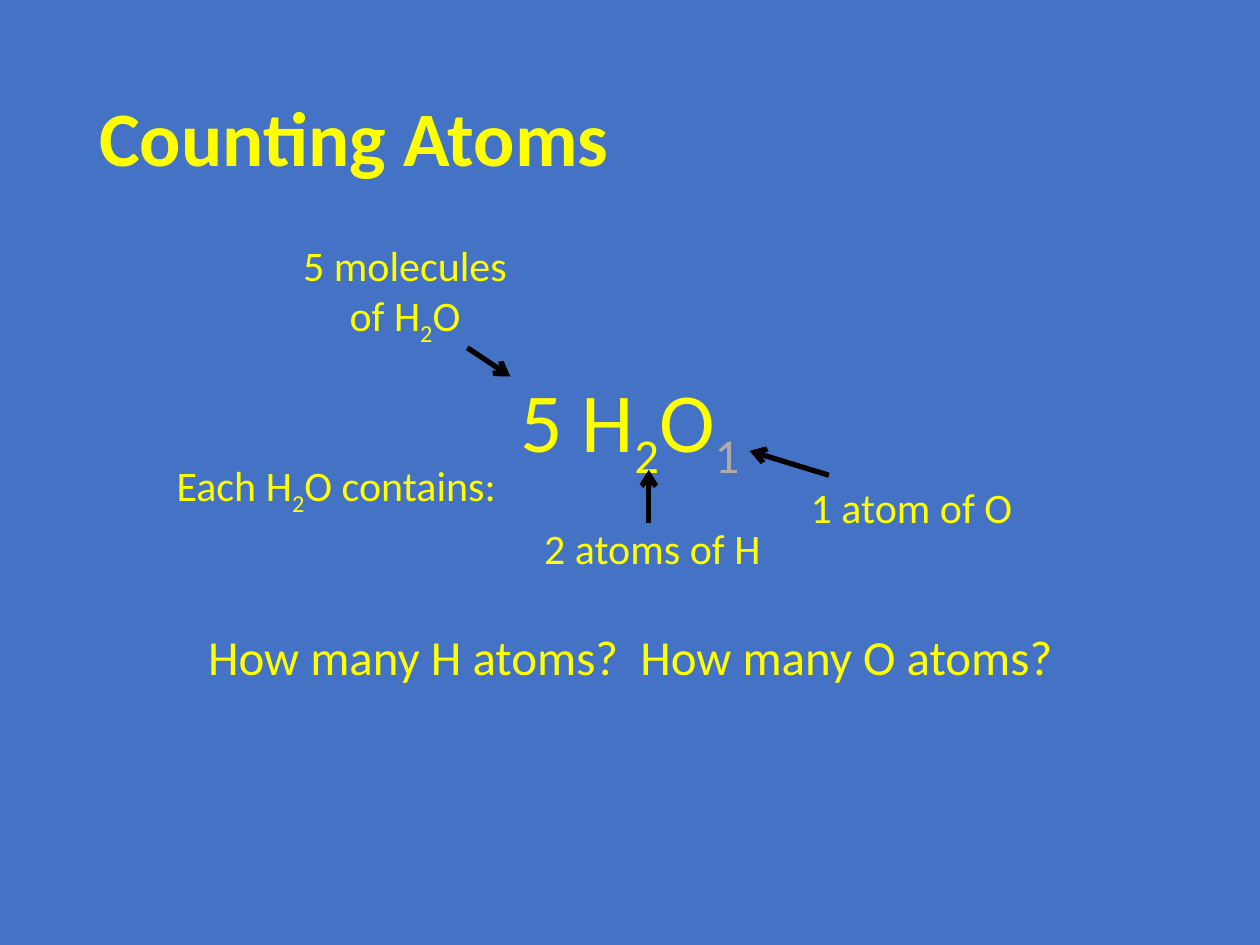
import pptx
import pptx.util
import pptx.dml.color
import pptx.enum.shapes
import pptx.enum.text
import pptx.oxml.ns
import lxml.etree

Cm = pptx.util.Cm
Pt = pptx.util.Pt
ALIGN = pptx.enum.text.PP_ALIGN
ANCHOR = pptx.enum.text.MSO_ANCHOR
BLUE, YELLOW, GREY, BLACK = "4472C4", "FFFF00", "AFABAB", "000000"


def color(code):
    return pptx.dml.color.RGBColor.from_string(code)


def add_box(slide, box, anchor=ANCHOR.TOP):
    frame = slide.shapes.add_textbox(*(Cm(v) for v in box)).text_frame
    frame.word_wrap = True
    frame.vertical_anchor = anchor
    return frame


def add_run(para, text, size, tint=YELLOW, bold=False, sub=False):
    run = para.add_run()
    run.text = text
    font = run.font
    font.name = "Calibri"
    font.size = Pt(size)
    font.bold = bold
    font.color.rgb = color(tint)
    if sub:
        run._r.get_or_add_rPr().set("baseline", "-25000")


def add_water(para, lead, tail, size):
    """Write H2O with a lowered 2 between the lead and tail text."""
    add_run(para, lead + "H", size)
    add_run(para, "2", size, sub=True)
    add_run(para, "O" + tail, size)


def add_arrow(slide, start, end):
    ends = [Cm(v) for v in (*start, *end)]
    line = slide.shapes.add_connector(
        pptx.enum.shapes.MSO_CONNECTOR.STRAIGHT, *ends)
    line.line.width = Pt(3)
    line.line.color.rgb = color(BLACK)
    qn = pptx.oxml.ns.qn
    lxml.etree.SubElement(line.line._get_or_add_ln(), qn("a:tailEnd"), type="arrow")
    lxml.etree.SubElement(line._element.spPr, qn("a:effectLst"))


def add_title(slide, box):
    para = add_box(slide, box, ANCHOR.MIDDLE).paragraphs[0]
    para.line_spacing = 0.9
    add_run(para, "Counting Atoms", 44, bold=True)


def add_body(slide, box):
    frame = add_box(slide, box)
    sum_para, ask_para = frame.paragraphs[0], frame.add_paragraph()
    for para, gap in ((sum_para, 10), (ask_para, 91.5)):
        para.alignment = ALIGN.CENTER
        para.line_spacing = 0.9
        para.space_before = Pt(gap)
    add_water(sum_para, "5 ", "", 48)
    add_run(sum_para, "1", 48, GREY, sub=True)
    add_run(ask_para, "How many H atoms?  How many O atoms?", 28)


def add_label(slide, box, lead, tail=None, arrow=None):
    """Place a caption; a tail adds H2O, an arrow is two points from the box corner."""
    para = add_box(slide, box).paragraphs[0]
    para.alignment = ALIGN.CENTER
    if tail is None:
        add_run(para, lead, 24)
    else:
        add_water(para, lead, tail, 24)
    if arrow:
        left, top = box[:2]
        add_arrow(slide, *((left + x, top + y) for x, y in arrow))


def main():
    deck = pptx.Presentation()
    deck.slide_width, deck.slide_height = Cm(25.4), Cm(19.05)
    slide = deck.slides.add_slide(deck.slide_layouts[6])
    fill = slide.background.fill
    fill.solid()
    fill.fore_color.rgb = color(BLUE)

    add_title(slide, (1.75, 1.02, 21.9, 3.68))
    add_body(slide, (1.75, 7.34, 21.9, 9.83))
    add_label(slide, (5.79, 4.7, 4.75, 2.31), "5 molecules of ", "",
              ((3.63, 2.31), (4.5, 2.89)))
    add_label(slide, (3.02, 9.14, 7.52, 1.27), "Each ", " contains:")
    add_label(slide, (10.29, 10.41, 5.72, 1.27), "2 atoms of H",
              arrow=((2.79, 0.13), (2.79, -0.94)))
    add_label(slide, (16, 9.58, 4.75, 1.27), "1 atom of O",
              arrow=((0.71, 0), (-0.89, -0.49)))
    deck.save("out.pptx")


if __name__ == "__main__":
    main()
